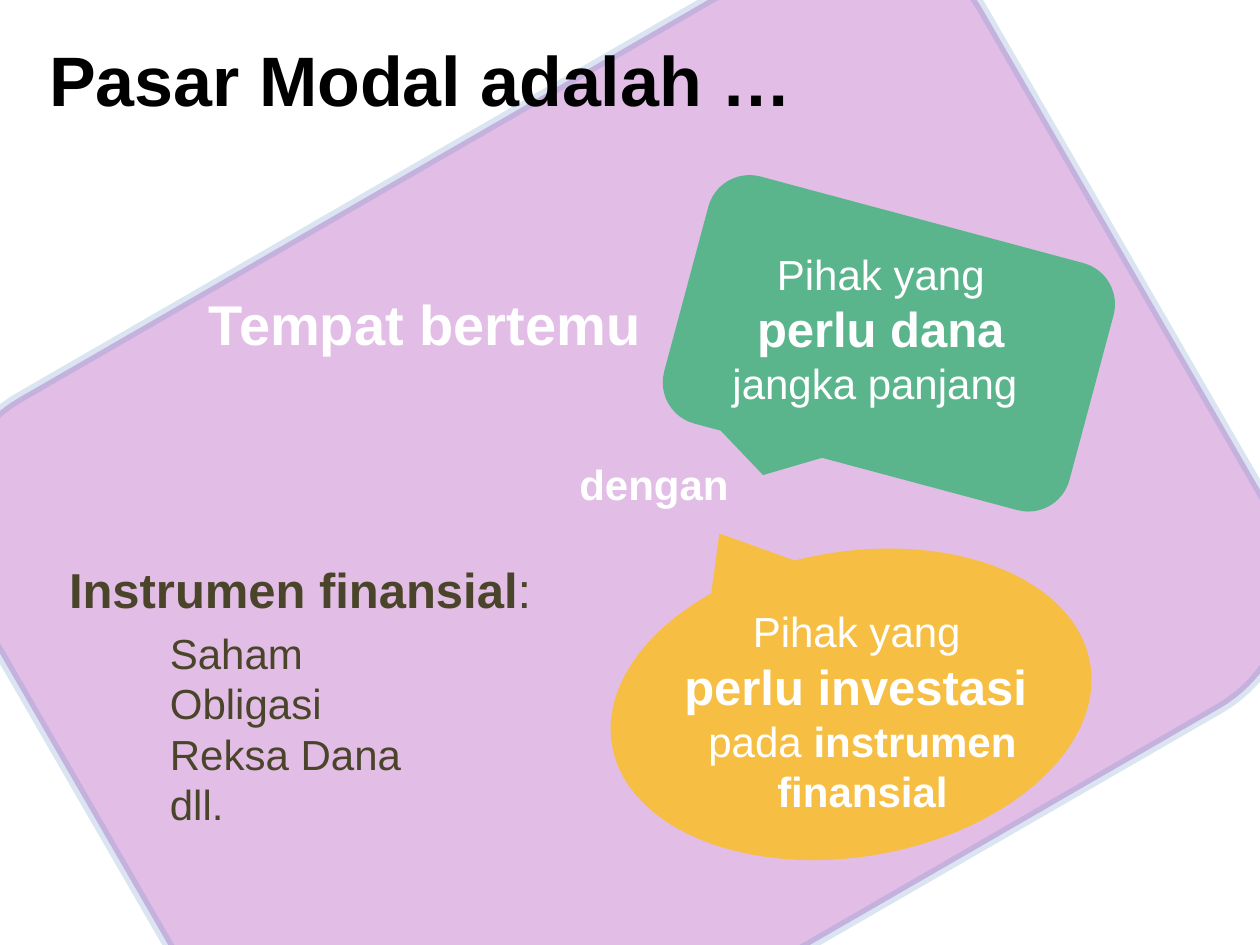
"""Build a slide explaining what the capital market (Pasar Modal) is."""
from dataclasses import dataclass

from lxml.etree import SubElement
from pptx import Presentation
from pptx.dml.color import RGBColor
from pptx.enum.shapes import MSO_SHAPE
from pptx.enum.text import MSO_ANCHOR, MSO_AUTO_SIZE, PP_ALIGN
from pptx.oxml.ns import qn
from pptx.util import Inches, Pt


@dataclass(frozen=True)
class Theme:
    font: str = "Arial"
    black: str = "000000"
    white: str = "FFFFFF"
    olive: str = "4A452A"
    lilac: str = "D094D6"
    blue: str = "4F81BD"
    green: str = "00B050"
    amber: str = "FFC000"
    title: int = 40
    lead: int = 32
    strong: int = 28
    normal: int = 24
    outline: int = 6


THEME = Theme()
BIG, MID, SMALL = THEME.lead, THEME.strong, THEME.normal

TITLE = [[("Pasar Modal adalah …", THEME.title, True)]]
FUND_SEEKER = [[("Pihak yang ", SMALL, False), ("perlu dana ", MID, True),
                ("jangka panjang ", SMALL, False)]]

PANELS = [
    (MSO_SHAPE.FLOWCHART_ALTERNATE_PROCESS, (0.26, 0.94, 9.31, 6.9), 330, THEME.lilac, 60),
    (MSO_SHAPE.ROUNDED_RECTANGULAR_CALLOUT, (5.39, 1.71, 3.33, 2.03), 15, THEME.green, 60),
    (MSO_SHAPE.OVAL_CALLOUT, (4.83, 4.38, 3.85, 2.42), 350.3, THEME.amber, 70),
]

LABELS = [
    ((1.25, 4.93, 2.75, 1.72), THEME.olive, PP_ALIGN.LEFT,
     [[("Saham\nObligasi", SMALL, False)], [("Reksa Dana \ndll.", SMALL, False)]]),
    ((4.18, 3.59, 2.02, 0.73), THEME.white, PP_ALIGN.CENTER, [[("dengan", SMALL, True)]]),
    ((4.92, 4.76, 3.85, 0.58), THEME.white, PP_ALIGN.CENTER,
     [[("Pihak yang \n", SMALL, False), ("perlu investasi \n", MID, True),
       ("pada ", SMALL, False), ("instrumen finansial", SMALL, True)]]),
    ((1.25, 2.25, 4.06, 0.75), THEME.white, PP_ALIGN.RIGHT, [[("Tempat bertemu ", BIG, True)]]),
    ((0.45, 4.39, 4.06, 0.75), THEME.olive, PP_ALIGN.LEFT,
     [[("Instrumen finansial", MID, True), (":", MID, False)]]),
]


def place(box, bounds):
    box.left, box.top, box.width, box.height = map(Inches, bounds)


def set_opacity(fill_parent, percent):
    color = fill_parent.find(qn("a:solidFill"))[0]
    SubElement(color, qn("a:alpha")).set("val", str(percent * 1000))


def add_panel(page, kind, bounds, rotation, color, opacity):
    panel = page.shapes.add_shape(kind, *map(Inches, bounds))
    panel.rotation = rotation
    panel.shadow.inherit = False
    panel.fill.solid()
    panel.fill.fore_color.rgb = RGBColor.from_string(color)
    panel.line.fill.background()
    set_opacity(panel.element.spPr, opacity)
    return panel


def write(box, paragraphs, color, align, anchor=MSO_ANCHOR.TOP):
    frame = box.text_frame
    frame.word_wrap = True
    frame.auto_size = MSO_AUTO_SIZE.NONE
    frame.vertical_anchor = anchor
    for index, spans in enumerate(paragraphs):
        para = frame.add_paragraph() if index else frame.paragraphs[0]
        para.alignment = align
        para.space_before = Pt(0)
        for text, size, bold in spans:
            for number, line in enumerate(text.split("\n")):
                if number:
                    para.add_line_break()
                if line:
                    span = para.add_run()
                    span.text = line
                    span.font.name = THEME.font
                    span.font.size = Pt(size)
                    span.font.bold = bold
                    span.font.color.rgb = RGBColor.from_string(color)


def remove_bullet(para):
    properties = para._p.get_or_add_pPr()
    properties.set("marL", "0")
    properties.set("indent", "0")
    SubElement(properties, qn("a:buNone"))


def main():
    deck = Presentation()
    deck.slide_width, deck.slide_height = Inches(10), Inches(7.5)
    page = deck.slides.add_slide(deck.slide_layouts[1])
    title, body = page.placeholders

    backdrop, _, ellipse = [add_panel(page, *panel) for panel in PANELS]
    backdrop.line.color.rgb = RGBColor.from_string(THEME.blue)
    backdrop.line.width = Pt(THEME.outline)
    set_opacity(backdrop.line._ln, 20)
    ellipse.element.spPr.xfrm.set("flipV", "1")

    for box in (title, body):
        page.shapes._spTree.append(box.element)
    place(title, (0.29, 0.12, 7.41, 1))
    write(title, TITLE, THEME.black, PP_ALIGN.LEFT, MSO_ANCHOR.MIDDLE)
    place(body, (5.67, 1.92, 2.64, 0.4))
    write(body, FUND_SEEKER, THEME.white, PP_ALIGN.CENTER)
    remove_bullet(body.text_frame.paragraphs[0])

    for bounds, color, align, paragraphs in LABELS:
        label = page.shapes.add_textbox(*map(Inches, bounds))
        write(label, paragraphs, color, align)

    deck.save("out.pptx")


if __name__ == "__main__":
    main()
